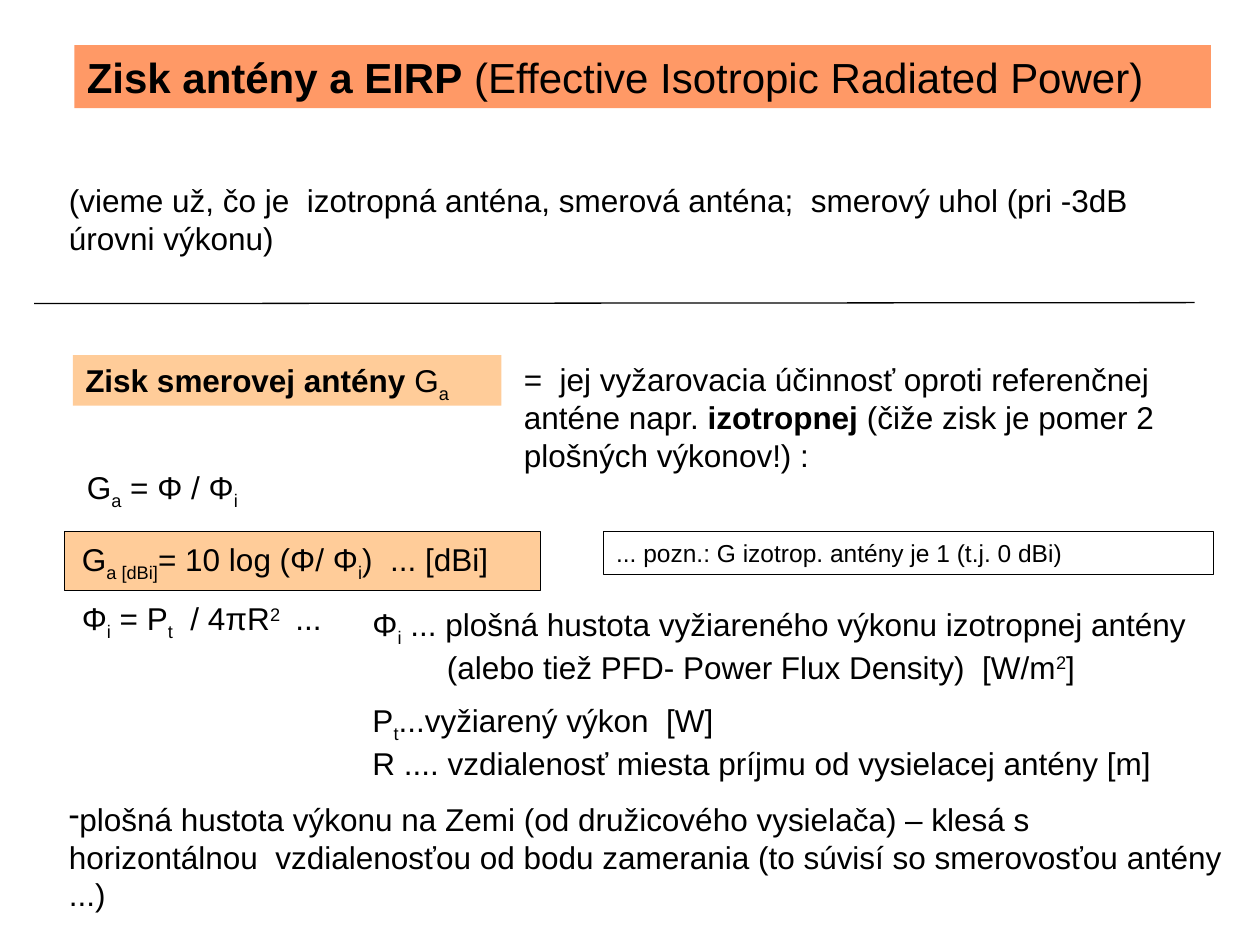
"""Build the slide on antenna gain and EIRP."""
import dataclasses

import pptx
import pptx.dml.color
import pptx.enum.shapes
import pptx.enum.text
import pptx.oxml.ns
import pptx.util
from lxml import etree

Cm = pptx.util.Cm
Pt = pptx.util.Pt


@dataclasses.dataclass(frozen=True)
class Theme:
    font: str = "Arial"
    ink: str = "000000"
    head: str = "FF9966"
    tint: str = "FFCC99"
    title: int = 24
    body: int = 18
    note: int = 14
    gap: int = 9
    rule: float = 0.75


THEME = Theme()
SHIFT = {"sub": "-25000", "sup": "30000"}


def color(code):
    return pptx.dml.color.RGBColor.from_string(code)


def sub(text):
    return text, "sub"


def sup(text):
    return text, "sup"


def bold(text):
    return text, "bold"


def add_run(para, part, size):
    text, kind = part if isinstance(part, tuple) else (part, "")
    run = para.add_run()
    run.text = text
    font = run.font
    font.name = THEME.font
    font.size = Pt(size)
    font.color.rgb = color(THEME.ink)
    font.bold = kind == "bold"
    if kind in SHIFT:
        run._r.get_or_add_rPr().set("baseline", SHIFT[kind])


def write(shape, *paras, size=THEME.body, left=0, hang=0, gaps=(), bullet=None):
    frame = shape.text_frame
    frame.word_wrap = True
    frame.auto_size = pptx.enum.text.MSO_AUTO_SIZE.SHAPE_TO_FIT_TEXT
    frame.vertical_anchor = pptx.enum.text.MSO_ANCHOR.TOP
    for num, parts in enumerate(paras):
        para = frame.add_paragraph() if num else frame.paragraphs[0]
        para.alignment = pptx.enum.text.PP_ALIGN.LEFT
        para.space_before = Pt(THEME.gap if num in gaps else 0)
        props = para._p.get_or_add_pPr()
        props.set("marL", str(Cm(left)))
        props.set("indent", str(-Cm(hang)))
        if bullet:
            mark = etree.SubElement(props, pptx.oxml.ns.qn("a:buChar"))
            mark.set("char", bullet)
        for part in parts:
            add_run(para, part, size)


def add_text(slide, area, *paras, **form):
    write(slide.shapes.add_textbox(*map(Cm, area)), *paras, **form)


def add_box(slide, area, *paras, fill=None, edge=False, **form):
    kind = pptx.enum.shapes.MSO_SHAPE.RECTANGLE
    box = slide.shapes.add_shape(kind, *map(Cm, area))
    box.shadow.inherit = False
    if fill:
        box.fill.solid()
        box.fill.fore_color.rgb = color(fill)
    else:
        box.fill.background()
    if edge:
        box.line.color.rgb = color(THEME.ink)
        box.line.width = Pt(THEME.rule)
    else:
        box.line.fill.background()
    if paras:
        write(box, *paras, **form)


def add_line(slide, *ends):
    kind = pptx.enum.shapes.MSO_CONNECTOR.STRAIGHT
    line = slide.shapes.add_connector(kind, *map(Cm, ends))
    line.line.color.rgb = color(THEME.ink)
    line.line.width = Pt(THEME.rule)
    etree.SubElement(line._element.spPr, pptx.oxml.ns.qn("a:effectLst"))


def add_intro(slide):
    add_box(slide, (1.5, 0.91, 22.91, 1.27),
            [bold("Zisk antény a EIRP"), " (Effective Isotropic Radiated Power)"],
            fill=THEME.head, size=THEME.title)
    add_text(slide, (1.14, 3.53, 22.02, 1.78),
             ["(vieme už, čo je  izotropná anténa, smerová anténa;  smerový uhol (pri -3dB"],
             ["úrovni výkonu)"])
    add_line(slide, 0.69, 6.12, 24.08, 6.1)


def add_gain(slide):
    add_box(slide, (1.47, 7.16, 8.64, 1.02),
            [bold("Zisk smerovej antény "), "G", sub("a")], fill=THEME.tint)
    add_text(slide, (9.32, 7.14, 14.96, 2.54),
             ["=  jej vyžarovacia účinnosť oproti referenčnej anténe napr. ",
              bold("izotropnej "), "(čiže zisk je pomer 2 plošných výkonov!) :"],
             left=0.99)
    add_text(slide, (1.5, 9.32, 5.03, 1.02),
             ["G", sub("a"), " = Φ / Φ", sub("i")])
    add_box(slide, (1.3, 10.72, 9.6, 1.19), fill=THEME.tint, edge=True)
    add_text(slide, (1.4, 10.77, 23.04, 2.16),
             ["G", sub("a [dBi]"), "= 10 log (Φ/ Φ", sub("i"), ")  ... [dBi]"],
             ["Φ", sub("i"), " = P", sub("t"), "  / 4πR", sup("2   "), "..."],
             left=3.23, hang=3.23, gaps=(1,))
    add_box(slide, (12.17, 10.72, 12.29, 0.86),
            ["... pozn.: G izotrop. antény je 1 (t.j. 0 dBi)"],
            edge=True, size=THEME.note)


def add_terms(slide):
    add_text(slide, (7.26, 12.07, 17.6, 3.68),
             ["Φ", sub("i"), " ... plošná hustota vyžiareného výkonu izotropnej antény "
              "(alebo tiež PFD- Power Flux Density)  [W/m", sup("2"), "]"],
             ["P", sub("t"), "...vyžiarený výkon  [W]"],
             ["R .... vzdialenosť miesta príjmu od vysielacej antény [m]"],
             left=1.5, hang=1.5, gaps=(1,))
    add_text(slide, (1.14, 16, 23.77, 2.54),
             ["plošná hustota výkonu na Zemi (od družicového vysielača) – klesá s "
              "horizontálnou  vzdialenosťou od bodu zamerania "
              "(to súvisí so smerovosťou antény ...)"],
             bullet="-")


def main():
    deck = pptx.Presentation()
    deck.slide_width = Cm(25.4)
    deck.slide_height = Cm(19.05)
    slide = deck.slides.add_slide(deck.slide_layouts[6])
    add_intro(slide)
    add_gain(slide)
    add_terms(slide)
    deck.save("out.pptx")


if __name__ == "__main__":
    main()
